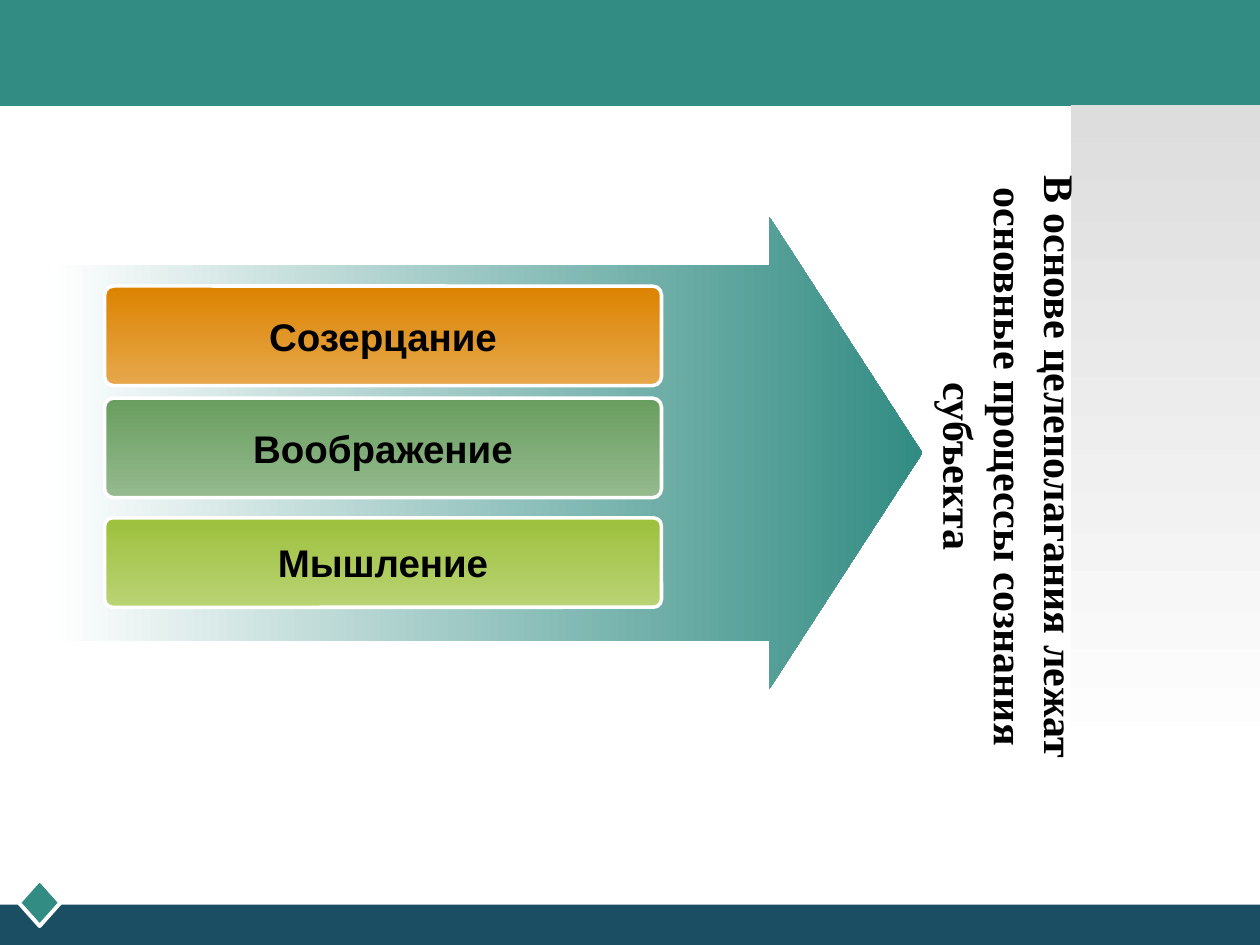
from pptx import Presentation
from pptx import util as u
from pptx.dml.color import RGBColor
from pptx.enum import shapes, text

# Grid of 100 columns by 75 rows on a 10 x 7.5 inch slide
CELL = u.Inches(0.1)
COLUMNS, ROWS = 100, 75

COLORS = {
    "teal": "328C83", "navy": "1B4E63", "white": "FFFFFF", "black": "000000",
    "grey": "DDDDDD", "orange": "DC8300", "orange_light": "E6A84C",
    "green": "699D5F", "green_light": "95BA8E",
    "lime": "9DC03C", "lime_light": "BAD375",
}
KIND = shapes.MSO_SHAPE

# Label, top row, height in rows, gradient colours
PROCESSES = [
    ("Созерцание", 22.7, 7.9, ("orange", "orange_light")),
    ("Воображение", 31.6, 7.9, ("green", "green_light")),
    ("Мышление", 41.1, 7.1, ("lime", "lime_light")),
]


def color(name):
    return RGBColor.from_string(COLORS[name])


def grid(*cells):
    return [round(cell * CELL) for cell in cells]


def add_block(page, kind, area, fill, angle=0, line=None, width=2, adjust=()):
    """Add a preset shape; a pair of colours as fill makes a gradient."""
    block = page.shapes.add_shape(kind, *grid(*area))
    block.shadow.inherit = False
    for index, value in enumerate(adjust):
        block.adjustments[index] = value
    if isinstance(fill, tuple):
        block.fill.gradient()
        block.fill.gradient_angle = angle
        for stop, name, position in zip(block.fill.gradient_stops, fill, (0, 1)):
            stop.color.rgb = color(name)
            stop.position = position
    else:
        block.fill.solid()
        block.fill.fore_color.rgb = color(fill)
    if line:
        block.line.color.rgb = color(line)
        block.line.width = u.Pt(width)
    else:
        block.line.fill.background()
    return block


def write(box, words, size, font="Arial", anchor=text.MSO_ANCHOR.TOP, wrap=True):
    frame = box.text_frame
    frame.word_wrap = wrap
    frame.vertical_anchor = anchor
    para = frame.paragraphs[0]
    para.alignment = text.PP_ALIGN.CENTER
    span = para.add_run()
    span.text = words
    span.font.size = u.Pt(size)
    span.font.name = font
    span.font.bold = True
    span.font.color.rgb = color("black")


def add_frame(page):
    # Bands, corner marker and side panel
    add_block(page, KIND.RECTANGLE, (0, 0, COLUMNS, 8.4), "teal")
    add_block(page, KIND.RECTANGLE, (0, 71.8, COLUMNS, ROWS - 71.8), "navy")
    add_block(page, KIND.DIAMOND, (1.5, 69.8, 3.3, 3.7), "teal",
              line="white", width=2.25)
    add_block(page, KIND.RECTANGLE, (85, 8.3, 15, 52.5), ("grey", "white"), 270)


def add_processes(page):
    # Arrow with the three processes stacked on it
    add_block(page, KIND.RIGHT_ARROW, (3.9, 17.2, 69.3, 37.5),
              ("white", "teal"), adjust=[0.793, 0.324])
    for label, top, height, fill in PROCESSES:
        box = add_block(page, KIND.ROUNDED_RECTANGLE, (8.3, top, 44.2, height),
                        fill, 270, line="white", adjust=[0.09])
        write(box, label, 22, anchor=text.MSO_ANCHOR.MIDDLE, wrap=False)


def add_conclusion(page):
    # Sideways text, read from top to bottom
    box = page.shapes.add_textbox(*grid(72.6, 10.9, 14.1, 52.3))
    write(box, "В основе целеполагания лежат основные процессы сознания субъекта",
          24, font="Times New Roman")
    box.text_frame._txBody.bodyPr.set("vert", "vert")


def main():
    deck = Presentation()
    deck.slide_width, deck.slide_height = grid(COLUMNS, ROWS)
    page = deck.slides.add_slide(deck.slide_layouts[6])
    add_frame(page)
    add_processes(page)
    add_conclusion(page)
    deck.save("out.pptx")


if __name__ == "__main__":
    main()
